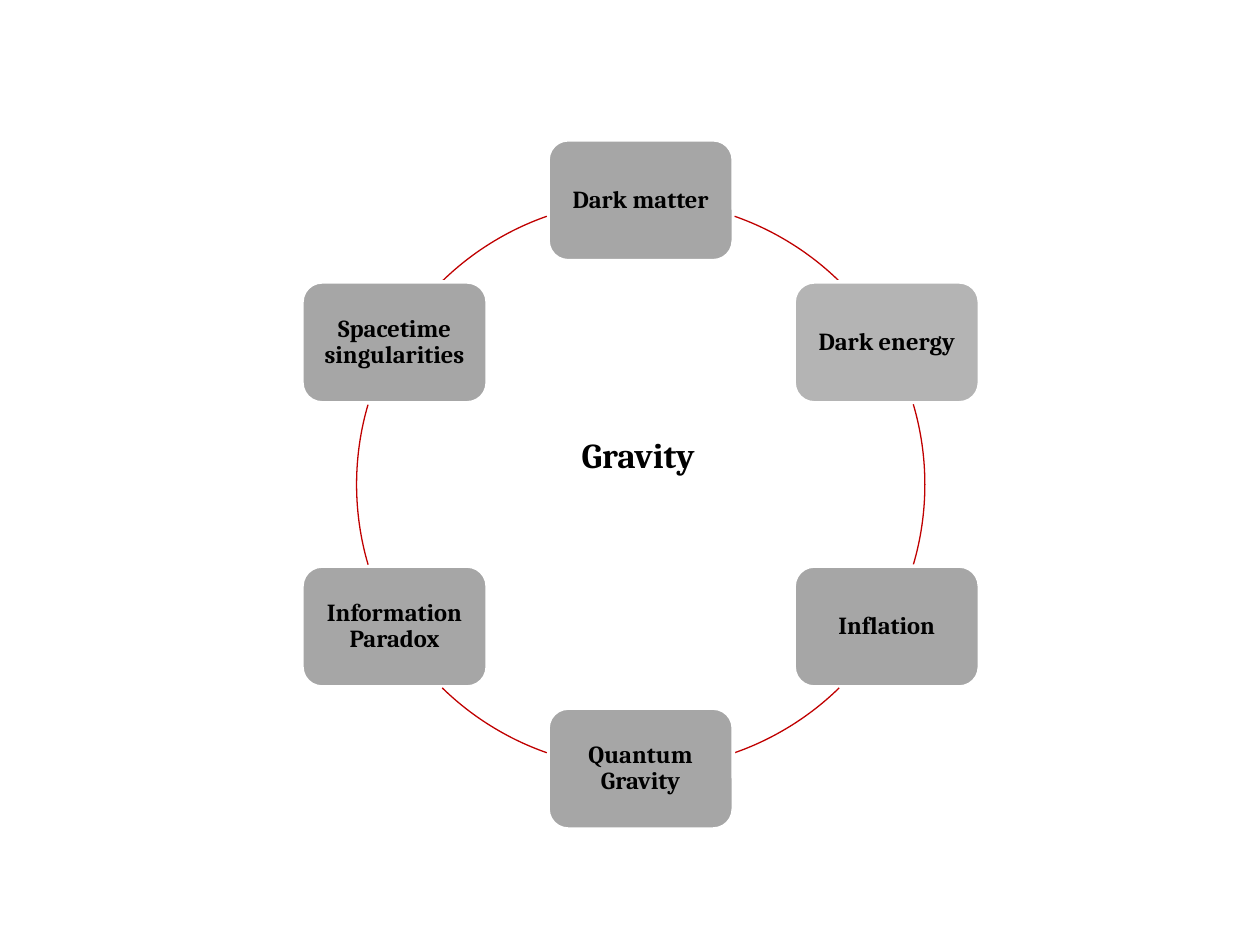
from dataclasses import dataclass
from math import cos, radians, sin

from lxml.etree import SubElement
from pptx import Presentation
from pptx.dml.color import RGBColor
from pptx.enum.shapes import MSO_SHAPE as Preset
from pptx.enum.text import MSO_ANCHOR as Anchor, MSO_AUTO_SIZE as AutoSize, PP_ALIGN as Align
from pptx.oxml.ns import qn
from pptx.text.text import TextFrame
from pptx.util import Inches, Pt


@dataclass(frozen=True)
class Theme:
    font: str = "Cambria"
    ink: RGBColor = RGBColor(0x00, 0x00, 0x00)
    topic_fill: RGBColor = RGBColor(0xA6, 0xA6, 0xA6)
    topic_edge: RGBColor = RGBColor(0xFF, 0xFF, 0xFF)
    ring: RGBColor = RGBColor(0xC0, 0x00, 0x00)
    topic_size: int = 14
    hub_size: int = 20


@dataclass(frozen=True)
class Topic:
    label: str
    opacity: int = 100


@dataclass(frozen=True)
class Arc:
    start: float  # degrees clockwise from the right
    end: float


THEME = Theme()
SLIDE_W, SLIDE_H = 10, 7.5

# Ring geometry, as shares of the slide's size
CENTER_X, CENTER_Y = 0.5085 * SLIDE_W, 0.5127 * SLIDE_H
RADIUS = 0.3007 * SLIDE_H
TOPIC_W, TOPIC_H = 0.147 * SLIDE_W, 0.128 * SLIDE_H
HUB_X, HUB_Y = 0.439 * SLIDE_W, 0.452 * SLIDE_H
HUB_W, HUB_H = 0.135 * SLIDE_W, 0.077 * SLIDE_H

# Clockwise from the top
TOPICS = [
    Topic("Dark matter"),
    Topic("Dark energy", opacity=84),
    Topic("Inflation"),
    Topic("Quantum Gravity"),
    Topic("Information Paradox"),
    Topic("Spacetime singularities"),
]
RIGHT_ARCS = [Arc(-70.7, -45.7), Arc(-16.4, 16.4), Arc(45.7, 70.7)]
ARCS = RIGHT_ARCS + [Arc(180 - arc.end, 180 - arc.start) for arc in RIGHT_ARCS]


def write_label(frame: TextFrame, label: str, size: int, inset: float, spacing: float) -> None:
    frame.word_wrap = True
    frame.margin_left = frame.margin_right = Inches(inset)
    frame.margin_top = frame.margin_bottom = Inches(inset)
    paragraph = frame.paragraphs[0]
    paragraph.alignment = Align.CENTER
    paragraph.line_spacing = spacing
    run = paragraph.add_run()
    run.text = label
    run.font.name = THEME.font
    run.font.size = Pt(size)
    run.font.bold = True
    run.font.color.rgb = THEME.ink


def draw_arc(shapes, arc: Arc) -> None:
    ring = shapes.add_shape(
        Preset.ARC, Inches(CENTER_X - RADIUS), Inches(CENTER_Y - RADIUS),
        Inches(2 * RADIUS), Inches(2 * RADIUS))
    ring.shadow.inherit = False
    ring.fill.background()
    ring.line.color.rgb = THEME.ring
    ring.line.width = Pt(0.75)
    # Angles are stored in 60000ths of a degree, adjustments in 100000ths
    ring.adjustments[0] = arc.start % 360 * 0.6
    ring.adjustments[1] = arc.end % 360 * 0.6


def draw_topic(shapes, topic: Topic, angle: float) -> None:
    x = CENTER_X + RADIUS * cos(radians(angle))
    y = CENTER_Y + RADIUS * sin(radians(angle))
    box = shapes.add_shape(
        Preset.ROUNDED_RECTANGLE, Inches(x - TOPIC_W / 2), Inches(y - TOPIC_H / 2),
        Inches(TOPIC_W), Inches(TOPIC_H))
    box.shadow.inherit = False
    box.fill.solid()
    box.fill.fore_color.rgb = THEME.topic_fill
    if topic.opacity < 100:
        color = box.fill._xPr.find(".//" + qn("a:srgbClr"))
        SubElement(color, qn("a:alpha"), val=str(topic.opacity * 1000))
    box.line.color.rgb = THEME.topic_edge
    box.line.width = Pt(2)
    box.text_frame.vertical_anchor = Anchor.MIDDLE
    write_label(box.text_frame, topic.label, THEME.topic_size, inset=0.06, spacing=0.9)


def draw_hub(shapes, label: str) -> None:
    hub = shapes.add_textbox(Inches(HUB_X), Inches(HUB_Y), Inches(HUB_W), Inches(HUB_H))
    write_label(hub.text_frame, label, THEME.hub_size, inset=0.05, spacing=1.0)
    hub.text_frame.auto_size = AutoSize.SHAPE_TO_FIT_TEXT


def main() -> None:
    deck = Presentation()
    deck.slide_width, deck.slide_height = Inches(SLIDE_W), Inches(SLIDE_H)
    shapes = deck.slides.add_slide(deck.slide_layouts[6]).shapes

    # Ring of topics joined by arcs
    step = 360 / len(TOPICS)
    for position, (topic, arc) in enumerate(zip(TOPICS, ARCS)):
        draw_topic(shapes, topic, position * step - 90)
        draw_arc(shapes, arc)

    # Shared theme in the middle
    draw_hub(shapes, "Gravity")
    deck.save("out.pptx")


if __name__ == "__main__":
    main()
